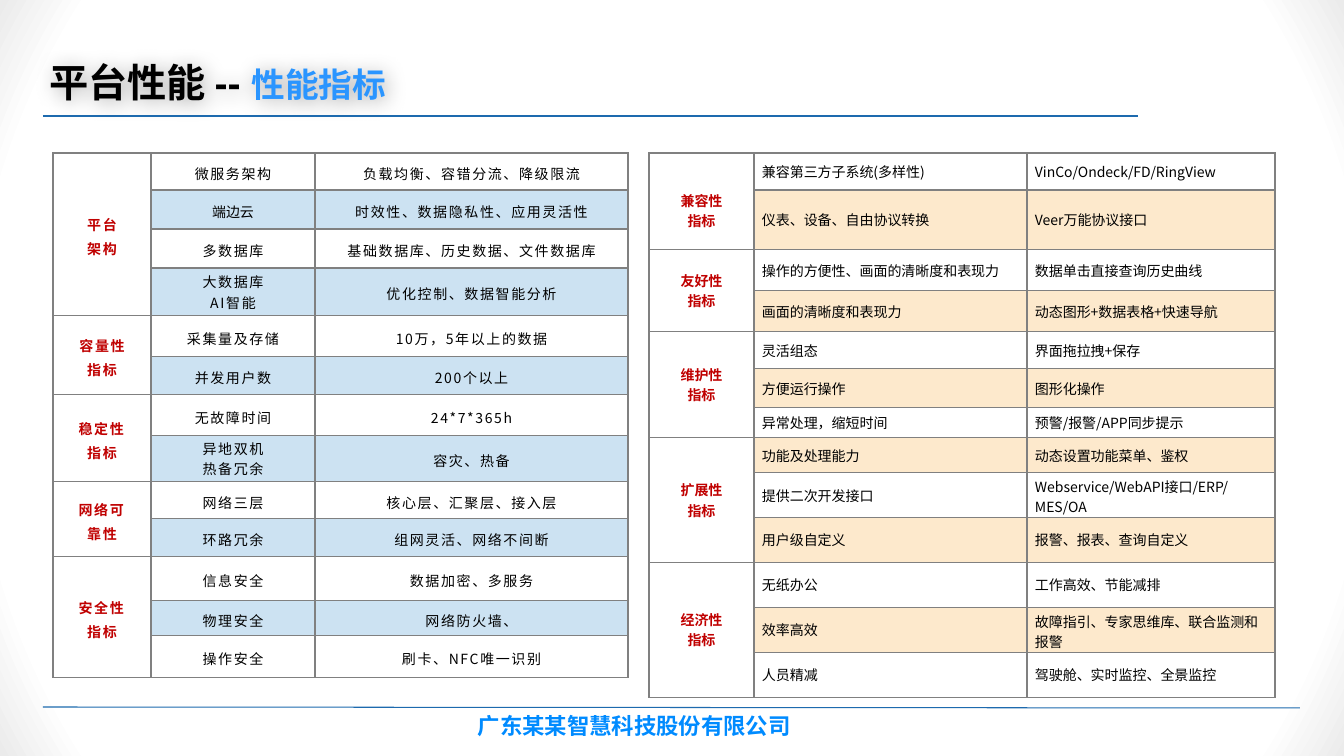
from lxml import etree
from pptx import Presentation
from pptx import util as u
from pptx.dml.color import RGBColor
from pptx.enum import shapes, text
from pptx.oxml import ns

EMU_PER_PX = 914400 / 100.8
BLACK = RGBColor(0x00, 0x00, 0x00)
WHITE = RGBColor(0xFF, 0xFF, 0xFF)
EDGE_GREY = RGBColor(0xEB, 0xEB, 0xEB)
BORDER_GREY = RGBColor(0x80, 0x80, 0x80)
RULE_BLUE = RGBColor(0x1D, 0x6A, 0xAE)
TITLE_BLUE = RGBColor(0x2A, 0x95, 0xFF)
COMPANY_BLUE = RGBColor(0x00, 0x8B, 0xFF)
LABEL_RED = RGBColor(0xC0, 0x00, 0x00)
BAND_BLUE = RGBColor(0x00, 0x70, 0xC0)
BAND_ORANGE = RGBColor(0xF6, 0x92, 0x00)
CJK_FONT = "Noto Sans CJK SC"

PLATFORM = [
    ("平台\n架构", [
        ("微服务架构", "负载均衡、容错分流、降级限流"),
        ("端边云", "时效性、数据隐私性、应用灵活性"),
        ("多数据库", "基础数据库、历史数据、文件数据库"),
        ("大数据库\nAI智能", "优化控制、数据智能分析")]),
    ("容量性\n指标", [
        ("采集量及存储", "10万，5年以上的数据"),
        ("并发用户数", "200个以上")]),
    ("稳定性指标", [
        ("无故障时间", "24*7*365h"),
        ("异地双机\n热备冗余", "容灾、热备")]),
    ("网络可靠性", [
        ("网络三层", "核心层、汇聚层、接入层"),
        ("环路冗余", "组网灵活、网络不间断")]),
    ("安全性指标", [
        ("信息安全", "数据加密、多服务"),
        ("物理安全", "网络防火墙、"),
        ("操作安全", "刷卡、NFC唯一识别")]),
]
USABILITY = [
    ("兼容性\n指标", [
        ("兼容第三方子系统(多样性)", "VinCo/Ondeck/FD/RingView"),
        ("仪表、设备、自由协议转换", "Veer万能协议接口")]),
    ("友好性\n指标", [
        ("操作的方便性、画面的清晰度和表现力", "数据单击直接查询历史曲线"),
        ("画面的清晰度和表现力", "动态图形+数据表格+快速导航")]),
    ("维护性\n指标", [
        ("灵活组态", "界面拖拉拽+保存"),
        ("方便运行操作", "图形化操作"),
        ("异常处理，缩短时间", "预警/报警/APP同步提示")]),
    ("扩展性\n指标", [
        ("功能及处理能力", "动态设置功能菜单、鉴权"),
        ("提供二次开发接口", "Webservice/WebAPI接口/ERP/MES/OA"),
        ("用户级自定义", "报警、报表、查询自定义")]),
    ("经济性\n指标", [
        ("无纸办公", "工作高效、节能减排"),
        ("效率高效", "故障指引、专家思维库、联合监测和报警"),
        ("人员精减", "驾驶舱、实时监控、全景监控")]),
]


def px(length):
    return u.Emu(round(length * EMU_PER_PX))


def add_xml(parent, tag, **attributes):
    return etree.SubElement(parent, ns.qn(tag), attributes)


def set_font(font, size, color, bold, name):
    font.size = u.Pt(size)
    font.bold = bold
    font.name = name
    font.color.rgb = color


def paint_background(slide):
    fill = slide.background.fill
    fill.gradient()
    for stop, color, position in zip(fill.gradient_stops, (WHITE, EDGE_GREY), (0.9, 1)):
        stop.color.rgb = color
        stop.position = position
    linear = slide.element.find(".//" + ns.qn("a:lin"))
    gradient = linear.getparent()
    gradient.remove(linear)
    circle = add_xml(gradient, "a:path", path="circle")
    add_xml(circle, "a:fillToRect", l="50000", t="50000", r="50000", b="50000")


def add_rule(slide, x1, y1, x2, y2):
    rule = slide.shapes.add_connector(
        shapes.MSO_CONNECTOR.STRAIGHT, px(x1), px(y1), px(x2), px(y2))
    rule.line.color.rgb = RULE_BLUE
    rule.line.width = u.Pt(0.75)
    add_xml(rule.element.spPr, "a:effectLst")


def add_title(slide):
    title = slide.shapes.title
    title.left, title.top, title.width, title.height = px(39), px(36), px(386), px(77)
    frame = title.text_frame
    frame.auto_size = text.MSO_AUTO_SIZE.NONE
    frame.vertical_anchor = text.MSO_ANCHOR.MIDDLE
    heading = frame.paragraphs[0]
    heading.alignment = text.PP_ALIGN.LEFT
    heading.line_spacing = 1.3
    for words, size, color in (("平台性能 -- ", 28, BLACK), ("性能指标", 24, TITLE_BLUE)):
        run = heading.add_run()
        run.text = words
        set_font(run.font, size, color, True, "Arial")
    effects = add_xml(title.element.spPr, "a:effectLst")
    shadow = add_xml(effects, "a:outerShdw", blurRad="190500", dist="38100", dir="2700000")
    shade = add_xml(shadow, "a:srgbClr", val=str(BLACK))
    add_xml(shade, "a:alpha", val="35000")


def add_company(slide):
    company = slide.shapes.add_textbox(px(468), px(707), px(408), px(37))
    frame = company.text_frame
    frame.word_wrap = True
    frame.text = "广东某某智慧科技股份有限公司"
    line = frame.paragraphs[0]
    line.alignment = text.PP_ALIGN.JUSTIFY
    set_font(line.font, 16, COMPANY_BLUE, True, "Arial")


def style_cell(cell, band):
    if band is None:
        cell.fill.background()
    else:
        cell.fill.solid()
        cell.fill.fore_color.rgb = band
    properties = cell._tc.get_or_add_tcPr()
    for tint in properties.iter(ns.qn("a:srgbClr")):
        add_xml(tint, "a:alpha", val="20000")
    for index, side in enumerate(("a:lnL", "a:lnR", "a:lnT", "a:lnB")):
        border = add_xml(properties, side, w="12700")
        add_xml(add_xml(border, "a:solidFill"), "a:srgbClr", val=str(BORDER_GREY))
        properties.insert(index, border)


def write_cell(cell, words, is_label, margins, alignment, line_spacing, tracking):
    cell.vertical_anchor = text.MSO_ANCHOR.MIDDLE
    cell.margin_left = cell.margin_right = px(margins[0])
    cell.margin_top = cell.margin_bottom = px(margins[1])
    cell.text_frame.text = words
    for line in cell.text_frame.paragraphs:
        line.alignment = alignment
        line.line_spacing = line_spacing
        set_font(line.font, 10, LABEL_RED if is_label else BLACK, is_label, CJK_FONT)
        defaults = line._p.pPr.find(ns.qn("a:defRPr"))
        defaults.set("spc", str(tracking))
        add_xml(defaults, "a:ea", typeface=CJK_FONT)


def add_indicators(slide, left, groups, widths, heights, band,
                   margins, alignment, line_spacing, tracking):
    table = slide.shapes.add_table(
        len(heights), len(widths), px(left), px(153), px(sum(widths)), px(sum(heights))).table
    table.first_row = table.horz_banding = False
    for column, width in zip(table.columns, widths):
        column.width = px(width)
    for row, height in zip(table.rows, heights):
        row.height = px(height)
    for row in range(len(heights)):
        for column in range(len(widths)):
            style_cell(table.cell(row, column), band if column and row % 2 else None)
    first = 0
    for label, indicators in groups:
        label_cell = table.cell(first, 0)
        label_cell.merge(table.cell(first + len(indicators) - 1, 0))
        write_cell(label_cell, label, True, margins, text.PP_ALIGN.CENTER,
                   line_spacing, tracking)
        for row, indicator in enumerate(indicators, first):
            for column, words in enumerate(indicator, 1):
                write_cell(table.cell(row, column), words, False, margins, alignment,
                           1.0 if "\n" in words else line_spacing,
                           0 if words == "端边云" else tracking)
        first += len(indicators)
    return table


def main():
    deck = Presentation()
    deck.slide_width, deck.slide_height = px(1344), px(756)
    slide = deck.slides.add_slide(deck.slide_layouts[5])
    paint_background(slide)
    add_rule(slide, 43, 116, 1138, 116)
    add_rule(slide, 43, 707, 1300, 708)
    add_company(slide)
    add_title(slide)
    add_indicators(slide, 53, PLATFORM, (98, 164, 313),
                   (37, 39, 39, 48, 41, 38, 41, 46, 37, 38, 44, 35, 42),
                   BAND_BLUE, (19, 1), text.PP_ALIGN.CENTER, 1.2, 120)
    usability = add_indicators(slide, 649, USABILITY, (105, 273, 248),
                               (37, 59, 41, 41, 37, 39, 30, 35, 45, 45, 45, 45, 45),
                               BAND_ORANGE, (8, 4), text.PP_ALIGN.LEFT, 1.0, 0)
    usability.cell(0, 0).margin_top = px(22)
    deck.save("out.pptx")


if __name__ == "__main__":
    main()
